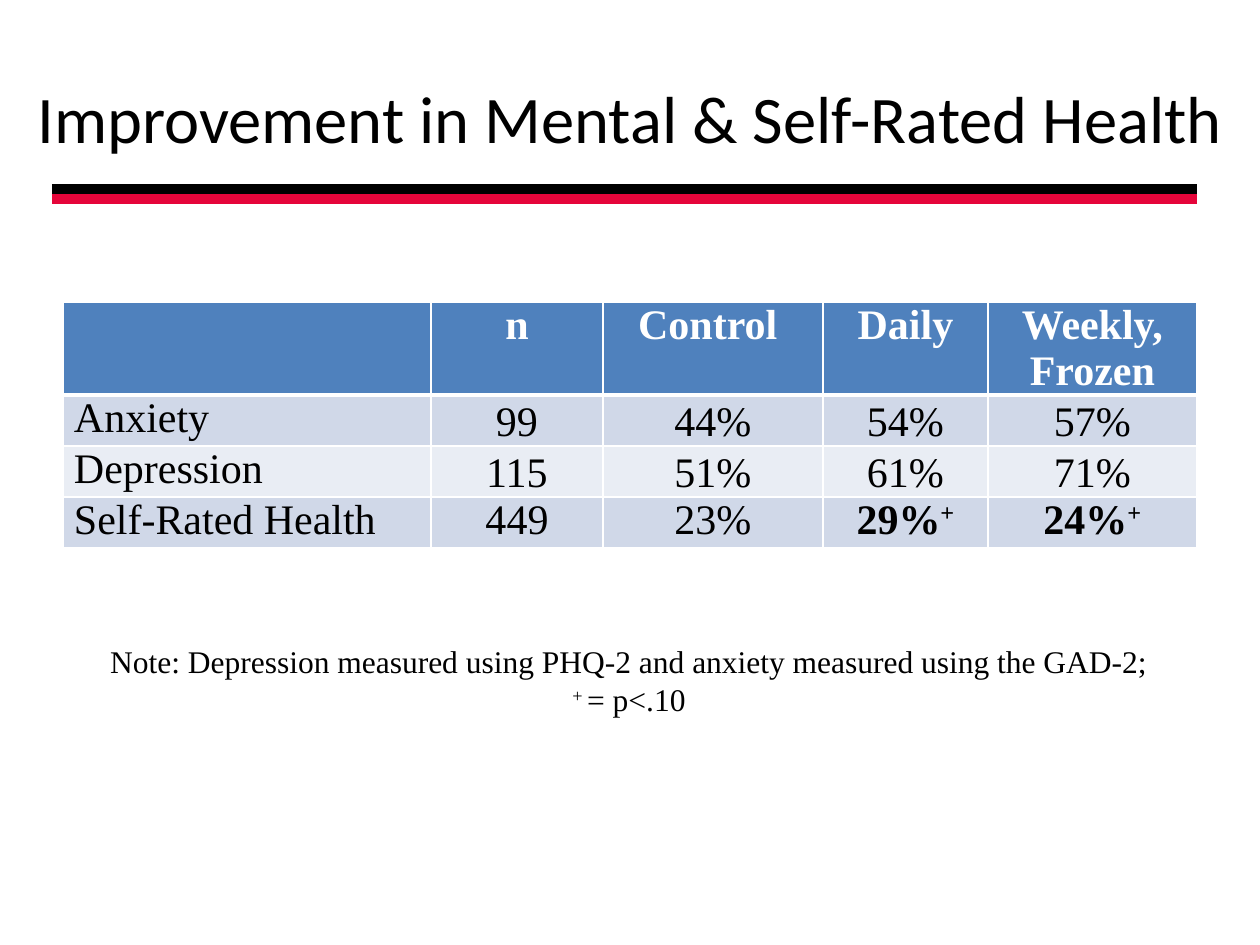
from pptx import Presentation
from pptx.dml.color import RGBColor
from pptx.enum.shapes import MSO_CONNECTOR
from pptx.enum.text import MSO_ANCHOR, PP_ALIGN
from pptx.oxml import parse_xml
from pptx.oxml.ns import nsdecls
from pptx.util import Emu, Pt

LEFT, CENTER = PP_ALIGN.LEFT, PP_ALIGN.CENTER
TOP, MIDDLE, BOTTOM = MSO_ANCHOR.TOP, MSO_ANCHOR.MIDDLE, MSO_ANCHOR.BOTTOM
STRAIGHT = MSO_CONNECTOR.STRAIGHT
BLACK = RGBColor(0x00, 0x00, 0x00)
WHITE = RGBColor(0xFF, 0xFF, 0xFF)
RED = RGBColor(0xE5, 0x05, 0x3A)
BLUE = RGBColor(0x4F, 0x81, 0xBD)
BAND = RGBColor(0xD0, 0xD8, 0xE8)
PALE = RGBColor(0xE9, 0xED, 0xF4)


def px(n):
    return Emu(round(n * 914400 / 126))


class SlideBuilder:
    """Holds the text style and the current slide."""

    title_font = "Calibri"
    body_font = "Times New Roman"

    def __init__(self, slide):
        self.s = slide

    def run(self, p, text, size, font=body_font, color=BLACK, bold=False, sup=False):
        r = p.add_run()
        r.text = text
        r.font.size = Pt(size)
        r.font.name = font
        r.font.bold = bold
        r.font.color.rgb = color
        if sup:
            r._r.get_or_add_rPr().set("baseline", "30000")

    def title(self, text, x, y, w, h):
        sp = self.s.shapes.title
        sp.left, sp.top, sp.width, sp.height = map(px, (x, y, w, h))
        tf = sp.text_frame
        tf.word_wrap = True
        tf.vertical_anchor = MIDDLE
        p = tf.paragraphs[0]
        p.alignment = CENTER
        self.run(p, text, 38, self.title_font)

    def rule(self, x1, x2, y, color):
        ln = self.s.shapes.add_connector(STRAIGHT, px(x1), px(y), px(x2), px(y))
        ln.line.color.rgb = color
        ln.line.width = Pt(6)
        ln._element.spPr.append(parse_xml(f"<a:effectLst {nsdecls('a')}/>"))

    def note(self, paragraphs, x, y, w, h):
        tf = self.s.shapes.add_textbox(*map(px, (x, y, w, h))).text_frame
        tf.word_wrap = True
        for i, runs in enumerate(paragraphs):
            p = tf.add_paragraph() if i else tf.paragraphs[0]
            p.alignment = CENTER
            for text, sup in runs:
                self.run(p, text, 18, sup=sup)

    def border(self, cell, side, points):
        cell._tc.get_or_add_tcPr().append(parse_xml(
            f'<a:ln{side} {nsdecls("a")} w="{Pt(points)}"><a:solidFill>'
            f'<a:srgbClr val="{WHITE}"/></a:solidFill></a:ln{side}>'))

    def cell(self, cell, text, row, col, fill, anchor):
        for side in "LRTB":
            header_edge = (row, side) in ((0, "B"), (1, "T"))
            self.border(cell, side, 3 if header_edge else 1)
        cell.fill.solid()
        cell.fill.fore_color.rgb = fill
        cell.margin_left = cell.margin_right = px(11)
        cell.margin_top = cell.margin_bottom = 0
        cell.vertical_anchor = anchor
        p = cell.text_frame.paragraphs[0]
        p.alignment = CENTER if col else LEFT
        value, plus, _ = text.partition("+")
        color = BLACK if row else WHITE
        bold = row == 0 or bool(plus)
        if value:
            self.run(p, value, 24, color=color, bold=bold)
        if plus:
            self.run(p, plus, 24, color=color, bold=bold, sup=True)

    def table(self, rows, x, y, widths, heights):
        size = map(px, (x, y, sum(widths), sum(heights)))
        tbl = self.s.shapes.add_table(len(rows), len(widths), *size).table
        for column, w in zip(tbl.columns, widths):
            column.width = px(w)
        for i, (texts, h) in enumerate(zip(rows, heights)):
            tbl.rows[i].height = px(h)
            fill = BLUE if i == 0 else BAND if i % 2 else PALE
            for j, text in enumerate(texts):
                anchor = BOTTOM if i in (1, 2) and j else TOP
                self.cell(tbl.cell(i, j), text, i, j, fill, anchor)


def main():
    prs = Presentation()
    prs.slide_width, prs.slide_height = px(1260), px(945)
    b = SlideBuilder(prs.slides.add_slide(prs.slide_layouts[5]))
    b.rule(52, 1197, 189, BLACK)
    b.rule(52, 1197, 199, RED)
    b.title("Improvement in Mental & Self-Rated Health", 0, 38, 1260, 158)
    b.table([
        ["", "n", "Control ", "Daily", "Weekly, Frozen"],
        ["Anxiety", "99", "44%", "54%", "57%"],
        ["Depression", "115", "51%", "61%", "71%"],
        ["Self-Rated Health", "449", "23%", "29%+", "24%+"],
    ], 63, 302, [368, 172, 220, 165, 209], [92, 51, 51, 51])
    b.note([
        [("Note: Depression measured using PHQ-2 and anxiety measured using the GAD-2;", False)],
        [("+ ", True), ("= p<.10", False)],
    ], 38, 636, 1182, 127)
    prs.save("out.pptx")


if __name__ == "__main__":
    main()
